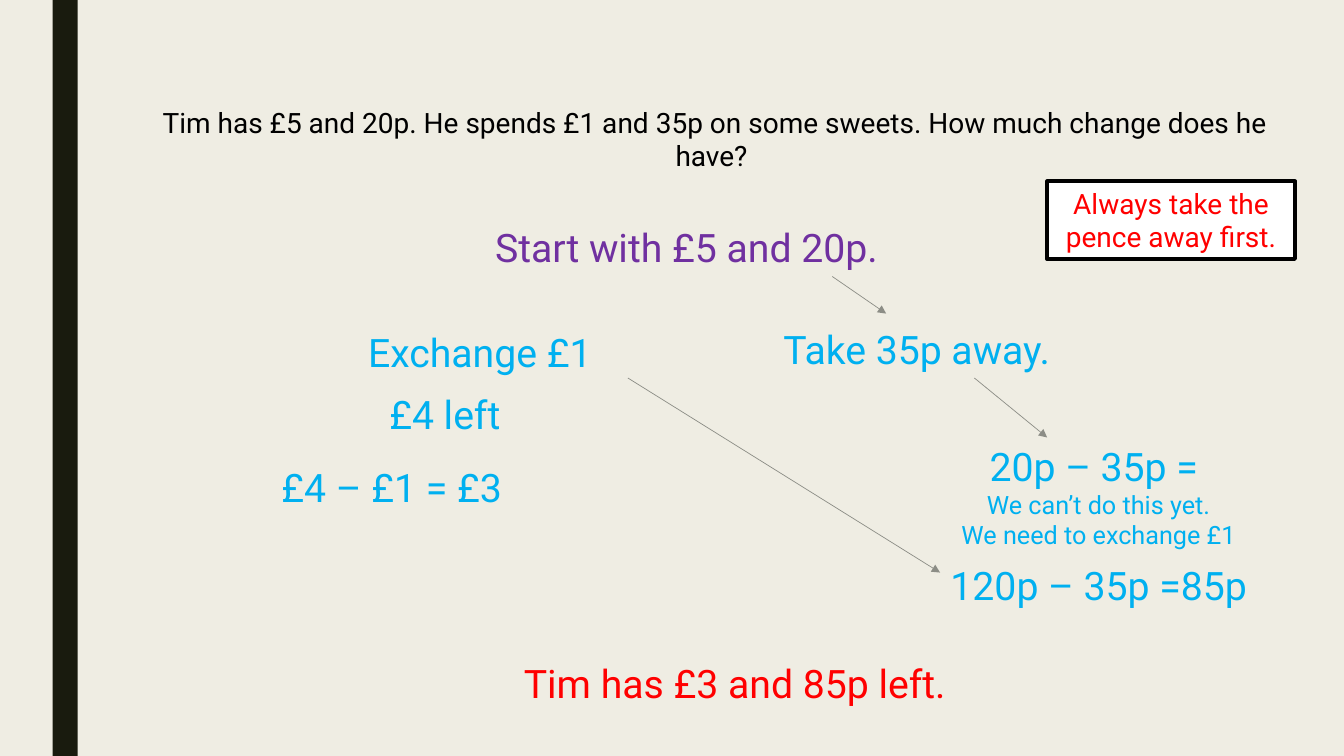
from lxml.etree import SubElement
from pptx import Presentation
from pptx.dml.color import RGBColor
from pptx.enum.shapes import MSO_CONNECTOR, MSO_SHAPE
from pptx.enum.text import MSO_ANCHOR, PP_ALIGN
from pptx.oxml.ns import qn
from pptx.util import Pt

BACKGROUND = RGBColor(0xEF, 0xED, 0xE3)
BAR = RGBColor(0x19, 0x1B, 0x0E)
ARROW = RGBColor(0x8C, 0x8D, 0x86)
BLACK = RGBColor(0x00, 0x00, 0x00)
WHITE = RGBColor(0xFF, 0xFF, 0xFF)
PURPLE = RGBColor(0x70, 0x30, 0xA0)
BLUE = RGBColor(0x00, 0xB0, 0xF0)
RED = RGBColor(0xFF, 0x00, 0x00)

FONT = "Roboto"
LARGE, MEDIUM, SMALL = 28, 20, 18
LINE_HEIGHT = 41
STEP_WIDTH = 260.5
WIDE = 827.5


def fill_text(shape, lines, color):
    """Write (text, size) lines as centred paragraphs."""
    frame = shape.text_frame
    frame.word_wrap = True
    frame.vertical_anchor = MSO_ANCHOR.TOP
    for index, (text, size) in enumerate(lines):
        paragraph = frame.paragraphs[0] if index == 0 else frame.add_paragraph()
        paragraph.alignment = PP_ALIGN.CENTER
        run = paragraph.add_run()
        run.text = text
        run.font.name = FONT
        run.font.size = Pt(size)
        run.font.color.rgb = color


def add_text(slide, box, lines, color):
    shape = slide.shapes.add_textbox(*map(Pt, box))
    fill_text(shape, lines, color)


def add_rectangle(slide, box, color):
    shape = slide.shapes.add_shape(MSO_SHAPE.RECTANGLE, *map(Pt, box))
    shape.shadow.inherit = False
    shape.fill.solid()
    shape.fill.fore_color.rgb = color
    shape.line.fill.background()
    return shape


def add_arrow(slide, start, end):
    arrow = slide.shapes.add_connector(MSO_CONNECTOR.STRAIGHT, *map(Pt, start + end))
    arrow.line.color.rgb = ARROW
    arrow.line.width = Pt(0.5)
    SubElement(arrow.line._get_or_add_ln(), qn("a:tailEnd"), type="triangle")
    SubElement(arrow._element.spPr, qn("a:effectLst"))


def add_question(slide, box):
    title = slide.shapes.title
    title.left, title.top, title.width, title.height = map(Pt, box)
    question = ("Tim has £5 and 20p. He spends £1 and 35p on some sweets. "
                "How much change does he have? ")
    fill_text(title, [(question, MEDIUM)], BLACK)


def add_reminder(slide, box):
    reminder = add_rectangle(slide, box, WHITE)
    reminder.line.color.rgb = BLACK
    reminder.line.width = Pt(2.75)
    fill_text(reminder, [("Always take the pence away first.", MEDIUM)], RED)


def add_pence_steps(slide, box):
    left, top, width, height = box
    right_column = left + width - STEP_WIDTH
    # Working that does not succeed yet
    add_text(slide, (left, top, 225.5, LINE_HEIGHT),
             [("Take 35p away.", LARGE)], BLUE)
    add_text(slide, (right_column, top + 83.5, STEP_WIDTH, 85),
             [("20p – 35p = ", LARGE), ("We can’t do this yet.", SMALL),
              ("We need to exchange £1", SMALL)], BLUE)
    # Working after the exchange
    add_text(slide, (right_column, top + height - LINE_HEIGHT, STEP_WIDTH, LINE_HEIGHT),
             [("120p – 35p =85p", LARGE)], BLUE)
    # Arrows into and between the pence steps
    add_arrow(slide, (left + 52.5, top - 31.5), (left + 91, top - 5))
    add_arrow(slide, (left + 154, top + 41), (left + 206, top + 83.5))


def add_pound_steps(slide, box):
    left, top, width, height = box
    steps = [("Exchange £1", width - STEP_WIDTH, 0),
             ("£4 left", 38, 44.5),
             ("£4 – £1 = £3", 0, height - LINE_HEIGHT)]
    for text, indent, drop in steps:
        add_text(slide, (left + indent, top + drop, STEP_WIDTH, LINE_HEIGHT),
                 [(text, LARGE)], BLUE)
    # The exchanged pound moves to the pence
    add_arrow(slide, (left + 299, top + 39), (left + 522, top + 178))


def main():
    presentation = Presentation()
    presentation.slide_width, presentation.slide_height = Pt(960), Pt(540)
    slide = presentation.slides.add_slide(presentation.slide_layouts[5])
    slide.background.fill.solid()
    slide.background.fill.fore_color.rgb = BACKGROUND

    # Side bar, question and starting amount
    add_rectangle(slide, (37.5, 0, 18, 540), BAR)
    add_question(slide, (97, 71.5, WIDE, 31.5))
    add_text(slide, (80, 156, WIDE, LINE_HEIGHT),
             [("Start with £5 and 20p. ", LARGE)], PURPLE)

    # Working
    add_pence_steps(slide, (542, 229, 373, 209.5))
    add_pound_steps(slide, (149.5, 231, 323.5, 137.5))
    add_reminder(slide, (748, 129.5, 177, 55.5))

    # Answer
    add_text(slide, (114.5, 467.5, WIDE, LINE_HEIGHT),
             [("Tim has £3 and 85p left. ", LARGE)], RED)
    presentation.save("out.pptx")


if __name__ == "__main__":
    main()
